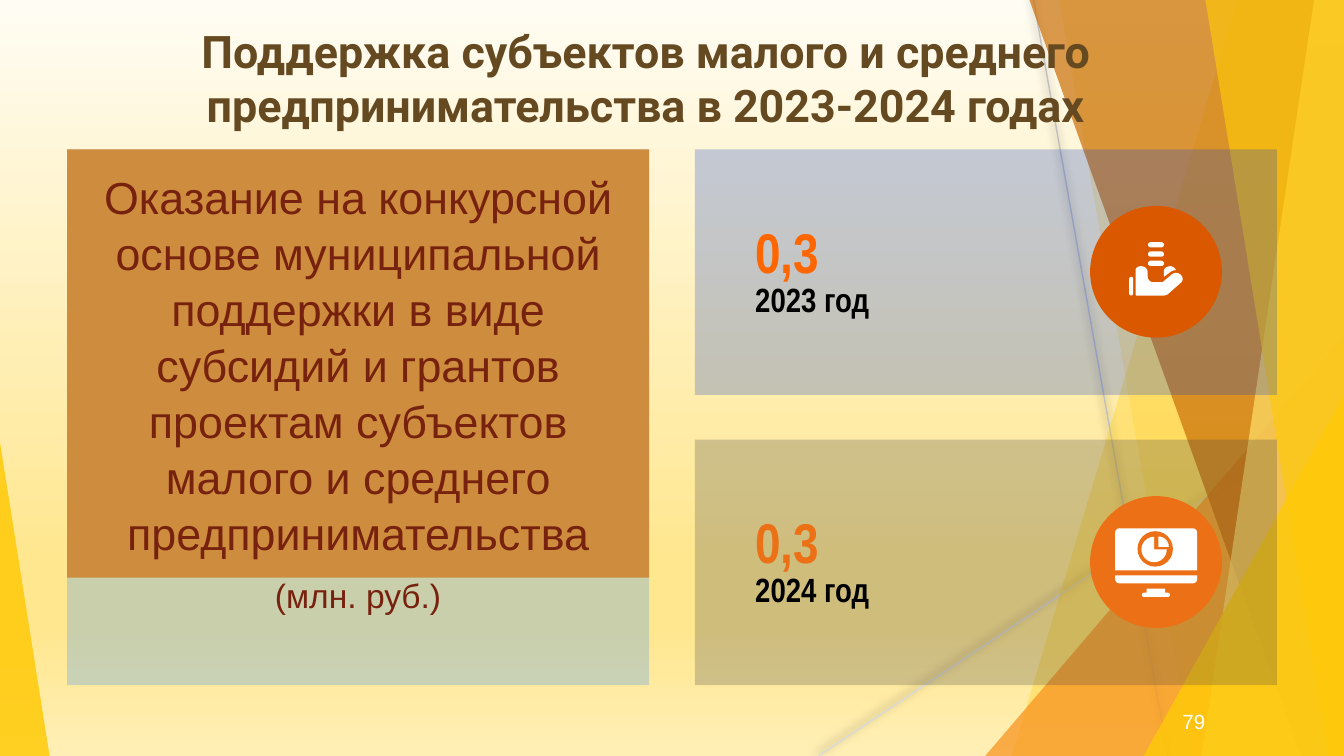
from copy import deepcopy

from lxml import etree
from pptx import Presentation
from pptx.dml.color import RGBColor
from pptx.enum.shapes import MSO_CONNECTOR, MSO_SHAPE
from pptx.enum.text import MSO_ANCHOR, PP_ALIGN
from pptx.oxml.ns import qn
from pptx.util import Pt

RECT, ROUND, OVAL = MSO_SHAPE.RECTANGLE, MSO_SHAPE.ROUNDED_RECTANGLE, MSO_SHAPE.OVAL
TRI, PIE, CAPPED = MSO_SHAPE.ISOSCELES_TRIANGLE, MSO_SHAPE.PIE, MSO_SHAPE.ROUND_2_SAME_RECTANGLE
STRAIGHT = MSO_CONNECTOR.STRAIGHT
MIDDLE = MSO_ANCHOR.MIDDLE
LEFT, CENTER = PP_ALIGN.LEFT, PP_ALIGN.CENTER

WHITE = RGBColor(0xFF, 0xFF, 0xFF)
BLACK = RGBColor(0, 0, 0)
CREAM = RGBColor(0xFF, 0xFC, 0xF3)
SAND = RGBColor(0xFF, 0xE7, 0x90)
PALE = RGBColor(0xFF, 0xEF, 0xB5)
GOLD = RGBColor(0xFF, 0xCA, 0x08)
LEMON = RGBColor(0xFF, 0xDF, 0x6B)
AMBER = RGBColor(0xF8, 0x93, 0x1D)
RUST = RGBColor(0xCA, 0x6F, 0x06)
SILVER = RGBColor(0xBF, 0xBF, 0xBF)
MIST = RGBColor(0xD9, 0xD9, 0xD9)
BLUE = RGBColor(0x16, 0x42, 0xC5)
SKY = RGBColor(0x2A, 0x8B, 0xFD)
GREY = RGBColor(0x43, 0x43, 0x43)
TAN = RGBColor(0xCE, 0x8D, 0x3E)
BROWN = RGBColor(0x65, 0x49, 0x21)
MAROON = RGBColor(0x77, 0x22, 0x0E)
FLAME = RGBColor(0xFF, 0x66, 0x00)
BURNT = RGBColor(0xDA, 0x58, 0x00)
ORANGE = RGBColor(0xEC, 0x70, 0x16)

WIDE, HIGH = 720, 405
STEP = 155.5  # from one year card to the next


def bend(start, curve, steps=8):
    """Points along a cubic curve given as (x1, y1, x2, y2, x, y)."""
    knots = [start, curve[:2], curve[2:4], curve[4:]]
    for i in range(1, steps + 1):
        t = i / steps
        parts = ((1 - t) ** 3, 3 * t * (1 - t) ** 2, 3 * t * t * (1 - t), t ** 3)
        yield tuple(sum(w * k[axis] for w, k in zip(parts, knots)) for axis in (0, 1))


class Deck:
    """Holds the style and the current slide; all lengths are points."""
    font = "Arial"
    inset = 7.2

    def __init__(self):
        self.file = Presentation()
        self.file.slide_width, self.file.slide_height = Pt(WIDE), Pt(HIGH)
        self.slide = self.file.slides.add_slide(self.file.slide_layouts[6])
        self.shapes = self.slide.shapes

    def back(self, stops):
        fill = self.slide.background.fill
        fill.gradient()
        fill.gradient_angle = 270
        group = next(self.slide.element.iter(qn("a:gsLst")))
        while len(group) < len(stops):
            group.append(deepcopy(group[0]))
        for stop, (place, color) in zip(fill.gradient_stops, stops):
            stop.position, stop.color.rgb = place, color

    def paint(self, shape, color, alpha=100):
        shape.shadow.inherit = False
        shape.line.fill.background()
        shape.fill.solid()
        shape.fill.fore_color.rgb = color
        if alpha < 100:
            tone = next(shape.element.spPr.iter(qn("a:srgbClr")))
            etree.SubElement(tone, qn("a:alpha"), val=str(alpha * 1000))
        return shape

    def shape(self, kind, x, y, w, h, color, alpha=100, adj=()):
        item = self.shapes.add_shape(kind, Pt(x), Pt(y), Pt(w), Pt(h))
        for i, value in enumerate(adj):
            item.adjustments[i] = value
        return self.paint(item, color, alpha)

    def free(self, start, parts, color, alpha=100):
        """Closed outline; a part is an (x, y) corner or a six-number curve."""
        points = [start]
        for part in parts:
            points += [part] if len(part) == 2 else bend(points[-1], part)
        spots = [(Pt(x), Pt(y)) for x, y in points]
        build = self.shapes.build_freeform(*spots[0])
        build.add_line_segments(spots[1:], close=True)
        return self.paint(build.convert_to_shape(), color, alpha)

    def line(self, x1, y1, x2, y2, color):
        """Thin line with a soft shadow."""
        item = self.shapes.add_connector(STRAIGHT, Pt(x1), Pt(y1), Pt(x2), Pt(y2))
        item.line.color.rgb, item.line.width = color, Pt(0.75)
        effect = etree.SubElement(item.element.spPr, qn("a:effectLst"))
        shade = etree.SubElement(effect, qn("a:outerShdw"), blurRad=str(int(Pt(5))),
                                 dist=str(int(Pt(2))), dir=str(245 * 60000))
        tone = etree.SubElement(shade, qn("a:srgbClr"), val=str(BLACK))
        etree.SubElement(tone, qn("a:alpha"), val="50000")

    def label(self, item, words, size, color, align=LEFT, bold=False, font=None, lead=None):
        frame = item.text_frame
        frame.word_wrap, frame.vertical_anchor = True, MIDDLE
        frame.margin_left = frame.margin_right = Pt(self.inset)
        frame.margin_top = frame.margin_bottom = Pt(self.inset)
        para = frame.paragraphs[0]
        para.alignment = align
        if lead:
            para.line_spacing = lead
        run = para.add_run()
        run.text = words
        run.font.name, run.font.size = font or self.font, Pt(size)
        run.font.bold, run.font.color.rgb = bold, color

    def text(self, x, y, w, h, *args, **style):
        box = self.shapes.add_textbox(Pt(x), Pt(y), Pt(w), Pt(h))
        self.label(box, *args, **style)


def decor(deck):
    deck.back([(0, CREAM), (0.74, SAND), (0.83, SAND), (1, PALE)])
    deck.line(553.7, 0, 625.7, HIGH, SILVER)
    deck.line(WIDE, 217.4, 438.5, HIGH, MIST)

    def band(top, foot, color, alpha):
        deck.free((top, 0), [(WIDE, 0), (WIDE, HIGH), (foot, HIGH)], color, alpha)

    def wedge(x, y, w, color, alpha, tip=1):
        deck.shape(TRI, x, y, w, HIGH - y, color, alpha, [tip])

    band(663, 542, GOLD, 30)
    band(567.4, 638.6, GOLD, 20)
    wedge(527.8, 180, 192.2, AMBER, 72)
    band(551.5, 697, RUST, 70)
    band(704, 643.7, LEMON, 70)
    band(645.8, 711.4, GOLD, 65)
    wedge(612.7, 211.7, 107.3, GOLD, 80)
    wedge(0, 236.9, 26.6, GOLD, 85, tip=0)


def hand(deck):
    deck.free((627.1, 142.6), [
        (625.7, 142.6, 623.5, 143.3, 623.5, 145.4), (623.5, 148.3), (626.4, 146.2),
        (627.1, 145.4, 628.6, 144.7, 630, 144.7),
        (629.3, 143.3, 627.8, 142.6, 627.1, 142.6)], WHITE)
    deck.free((611.3, 142.6), [
        (609.7, 142.6, 608.4, 143.4, 608.4, 144.7), (608.4, 157.7),
        (608.4, 158.1, 608.7, 158.4, 609.1, 158.4), (622.8, 158.4),
        (624.2, 158.4, 625.4, 158, 626.4, 157), (632.9, 151.2),
        (633.8, 150.3, 633.8, 148.5, 632.9, 147.6),
        (632.2, 146.7, 631.2, 146.2, 630, 146.2),
        (628.8, 146.2, 627.8, 146.9, 627.1, 147.6), (622.8, 151.2), (617.8, 151.2),
        (616.3, 151.2, 614.9, 149.8, 614.9, 148.3), (614.9, 146.2),
        (614.9, 144, 613.4, 142.6, 611.3, 142.6)], WHITE)
    deck.shape(ROUND, 604.9, 148.3, 2.2, 10, WHITE, adj=[0.5])
    for i in range(3):
        deck.shape(ROUND, 615, 129.7 + 5 * i, 8.6, 2.8, WHITE, adj=[0.5])


def screen(deck):
    deck.shape(RECT, 614.2, 315.3, 10, 2.4, WHITE)
    deck.shape(ROUND, 611.7, 317.5, 15.1, 2.3, WHITE, adj=[0.5])
    deck.shape(CAPPED, 597.4, 283, 43.9, 22.6, WHITE, adj=[0.1, 0])
    deck.shape(OVAL, 609.4, 284.6, 19, 19, ORANGE)
    deck.shape(PIE, 611.5, 287.6, 13.6, 13.6, WHITE)
    deck.shape(PIE, 615, 287.4, 11.2, 11.2, WHITE, adj=[162, 0])
    base = deck.shape(CAPPED, 597.4, 308.2, 43.9, 4.3, WHITE, adj=[0.5, 0])
    base.rotation = 180


def main():
    deck = Deck()
    decor(deck)
    years = [("2023 год", BLUE, FLAME, BURNT, hand), ("2024 год", GREY, ORANGE, ORANGE, screen)]
    for i, (year, tint, tone, disc, icon) in enumerate(years):
        drop = i * STEP
        deck.shape(ROUND, 372.3, 80 + drop, 311.8, 131.5, tint, 25, [0])
        deck.text(397.5, 149.2 + drop, 162, 21.6, year, 18, BLACK, bold=True, font="Arial Narrow")
        deck.text(397.5, 119.6 + drop, 162, 29.5, "0,3", 30, tone, bold=True, font="Arial Narrow")
        deck.shape(OVAL, 584, 110.3 + drop, 70.6, 70.6, disc)
        icon(deck)

    deck.shape(ROUND, 36, 80, 311.8, 287, SKY, 25, [0])
    deck.text(62, 12.2, 568, 58.3,
              "Поддержка субъектов малого и среднего предпринимательства в 2023-2024 годах",
              24, BROWN, CENTER, bold=True, font="Roboto")
    goal = deck.shape(RECT, 36, 80, 311.8, 229.5, TAN)
    deck.label(goal, "Оказание на конкурсной основе муниципальной поддержки в виде субсидий "
               "и грантов проектам субъектов малого и среднего предпринимательства",
               24, MAROON, CENTER, lead=1.04)
    deck.text(36, 270.7, 311.8, 96.3, "(млн. руб.)", 18, MAROON, CENTER)
    deck.text(626.4, 375.8, 40.3, 21.6, "79", 11, WHITE)
    deck.file.save("out.pptx")


if __name__ == "__main__":
    main()
